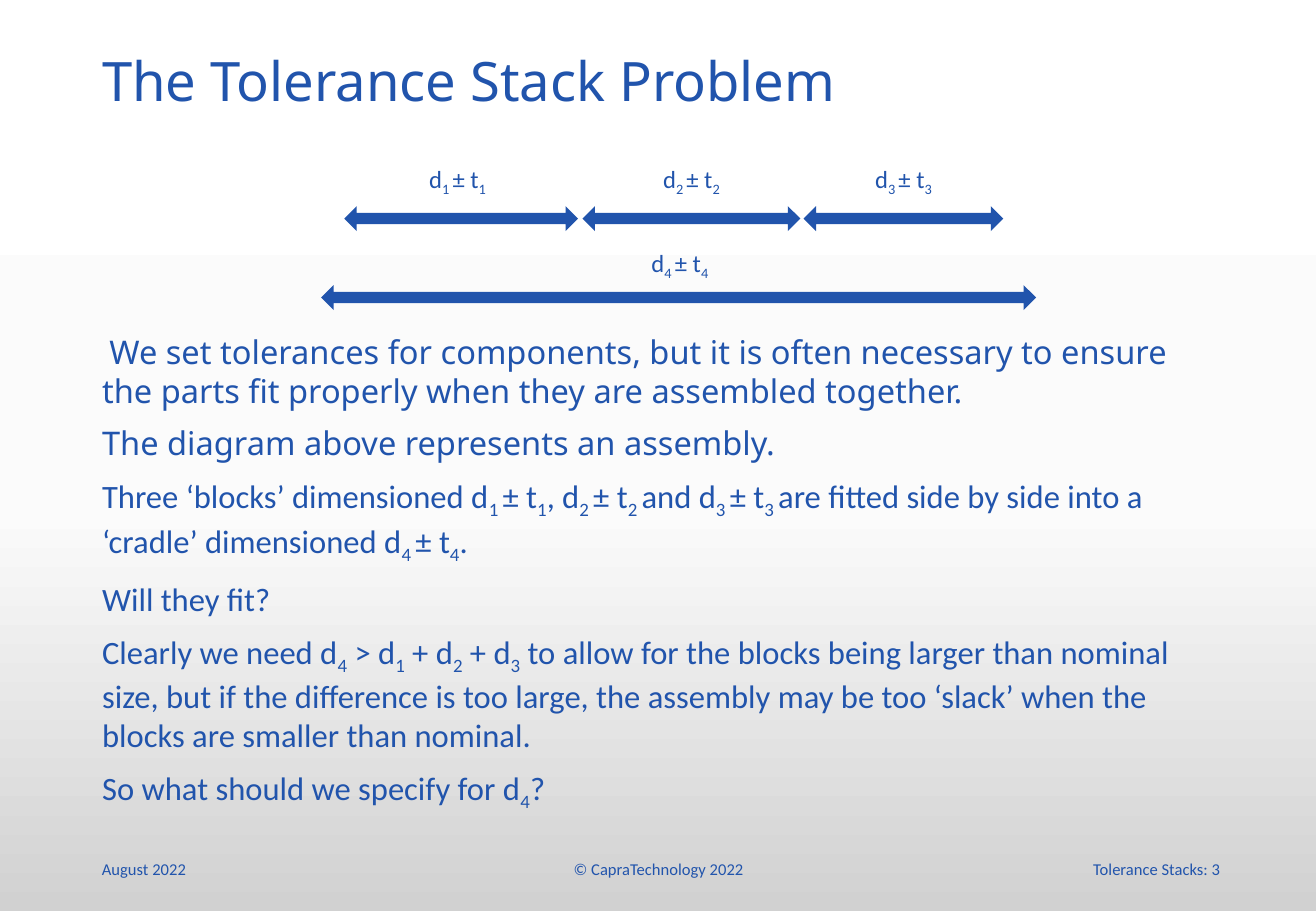
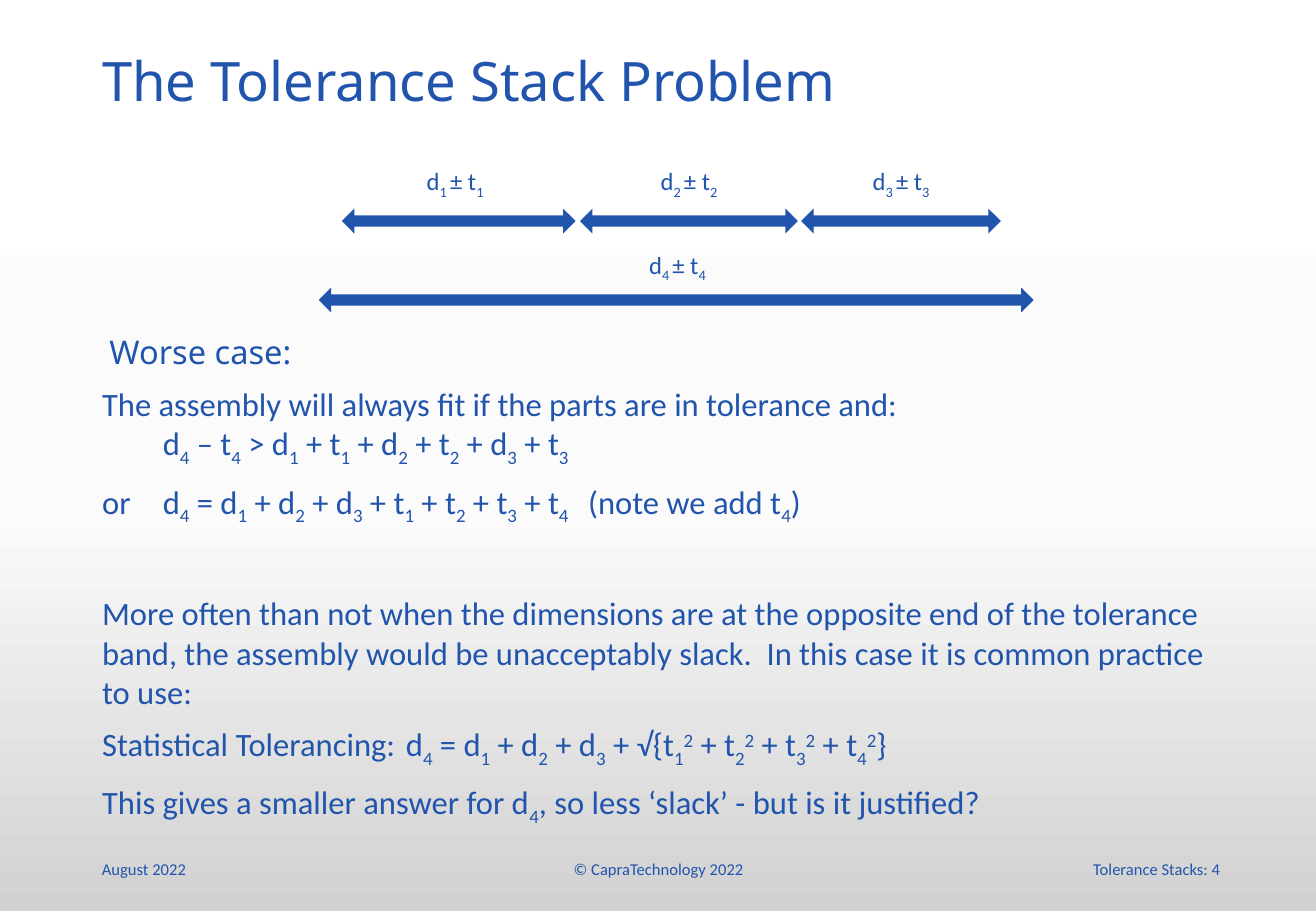
"""Two slides on the tolerance stack problem, with a dimension diagram above the text."""
from copy import deepcopy
from pptx import Presentation
from pptx import util as u
from pptx.dml.color import RGBColor
from pptx.enum import shapes, text
from pptx.oxml.ns import qn
from lxml import etree

HUES = {"ink": "2154AC", "top": "FFFFFF", "mid": "FBFBFB", "low": "D1D1D1"}
INK = RGBColor.from_string(HUES["ink"])
SANS, BODY = "Noto Sans", "Calibri"
LEFT, MID, RIGHT = text.PP_ALIGN.LEFT, text.PP_ALIGN.CENTER, text.PP_ALIGN.RIGHT
TABS = (1.62, 2.59, 5.69)
GAP = 8.1


def write(par, line, size, face=BODY):
    """Add runs; parts between bars are subscripts, superscripts (^) or a line break."""
    for i, part in enumerate(line.split("|")):
        if part == "\n":
            par.add_line_break()
        elif part:
            run = par.add_run()
            run.text = part.lstrip("^")
            run.font.size, run.font.name = u.Pt(size), face
            run.font.color.rgb = INK
            if i % 2:
                run.font._element.set("baseline", "30000" if part[0] == "^" else "-25000")


def label(home, box, line, size, align, anchor=text.MSO_ANCHOR.TOP):
    """Add a one-line text box."""
    frame = home.add_textbox(*map(u.Inches, box)).text_frame
    frame.word_wrap, frame.vertical_anchor = True, anchor
    frame.paragraphs[0].alignment = align
    write(frame.paragraphs[0], line, size)


SPANS = [
    (2.87, 1.76, 1.85, 1.79, 0.46, "d|1 |± t|1"),
    (4.83, 1.76, 1.72, 1.72, 0.46, "d|2 |± t|2"),
    (6.65, 1.76, 1.57, 1.57, 0.46, "d|3 |± t|3"),
    (2.68, 2.41, 5.81, 5.83, 0.42, "d|4 |± t|4"),
]
PAGES = [
    (3, 0, [
        ("We set tolerances for components, but it is often necessary to ensure "
         "the parts fit properly when they are assembled together.", SANS, 0),
        ("The diagram above represents an assembly.", SANS, GAP),
        ("Three ‘blocks’ dimensioned d|1 |± t|1|, d|2 |± t|2 |and d|3 |± t|3 |"
         "are fitted side by side into a ‘cradle’ dimensioned d|4 |± t|4|.", BODY, GAP),
        ("Will they fit?", BODY, GAP),
        ("Clearly we need d|4| > d|1| + d|2| + d|3| to allow for the blocks being larger "
         "than nominal size, but if the difference is too large, the assembly may be too "
         "‘slack’ when the blocks are smaller than nominal.", BODY, GAP),
        ("So what should we specify for d|4|?", BODY, GAP),
    ]),
    (4, 0.02, [
        ("Worse case:", SANS, 0),
        ("The assembly will always fit if the parts are in tolerance and:|\n|"
         "\td|4| – t|4| > d|1| + t|1| + d|2| + t|2| + d|3| + t|3", BODY, GAP),
        ("or\td|4| = d|1| + d|2| + d|3| + t|1| + t|2| + t|3| + t|4|\t(note we add t|4|)",
         BODY, GAP),
        ("More often than not when the dimensions are at the opposite end of the tolerance "
         "band, the assembly would be unacceptably slack.  In this case it is common "
         "practice to use:", BODY, 40),
        ("Statistical Tolerancing:\td|4| = d|1| + d|2| + d|3| + √{t|1||^2| + t|2||^2|"
         " + t|3||^2| + t|4||^2|}", BODY, GAP),
        ("This gives a smaller answer for d|4|, so less ‘slack’ - but is it justified?",
         BODY, GAP),
    ]),
]

deck = Presentation()
deck.slide_width, deck.slide_height = u.Inches(10.83), u.Inches(7.5)

fill = deck.slide_master.background.fill
fill.gradient()
fill.gradient_angle = 270
stops = deck.slide_master.element.find(".//" + qn("a:gsLst"))
stops.insert(1, deepcopy(stops[0]))
for stop, hue, pos in zip(fill.gradient_stops, ("top", "mid", "low"), (0, 0.56, 1)):
    stop.color.rgb = RGBColor.from_string(HUES[hue])
    stop.position = pos

for num, shift, lines in PAGES:
    slide = deck.slides.add_slide(deck.slide_layouts[1])
    title, body = slide.shapes.title, slide.placeholders[1]
    for hold, box in ((title, (0.74, 0.4, 9.39, 0.87)), (body, (0.74, 2.68, 9.34, 4.09))):
        hold.left, hold.top, hold.width, hold.height = map(u.Inches, box)
        hold.text_frame.vertical_anchor = text.MSO_ANCHOR.TOP
        hold.text_frame.auto_size = text.MSO_AUTO_SIZE.NONE
    head = title.text_frame.paragraphs[0]
    head.alignment, head.line_spacing = LEFT, 0.9
    write(head, "The Tolerance Stack Problem", 32.2, SANS)

    for i, (line, face, gap) in enumerate(lines):
        par = body.text_frame.add_paragraph() if i else body.text_frame.paragraphs[0]
        props = par._p.get_or_add_pPr()
        props.set("marL", "0")
        props.set("indent", str(0 if i else u.Inches(0.06)))
        etree.SubElement(props, qn("a:buNone"))
        if "\t" in line:
            tabs = etree.SubElement(props, qn("a:tabLst"))
            for tab in TABS:
                etree.SubElement(tabs, qn("a:tab"), pos=str(u.Inches(tab)), algn="l")
        par.space_before = u.Pt(gap)
        write(par, line, 19.3, face)

    group = slide.shapes.add_group_shape().shapes
    for x, y, wide, room, rise, name in SPANS:
        x, y = x - shift, y + shift
        arrow = group.add_shape(shapes.MSO_SHAPE.LEFT_RIGHT_ARROW,
                                *map(u.Inches, (x, y, wide, 0.08)))
        arrow.shadow.inherit = False
        arrow.fill.solid()
        arrow.fill.fore_color.rgb = arrow.line.color.rgb = INK
        arrow.line.width = u.Pt(3.75)
        etree.SubElement(arrow.line._ln, qn("a:miter"), lim="800000")
        label(group, (x, y - rise, room, 0.45), name, 14.6, MID)

    for x, wide, line, align in (
        (0.74, 2.44, "August 2022", LEFT),
        (3.59, 3.66, "© CapraTechnology 2022", MID),
        (7.7, 2.44, f"Tolerance Stacks: {num}", RIGHT),
    ):
        label(slide.shapes, (x, 6.95, wide, 0.4), line, 9.8, align, text.MSO_ANCHOR.MIDDLE)

deck.save("out.pptx")
